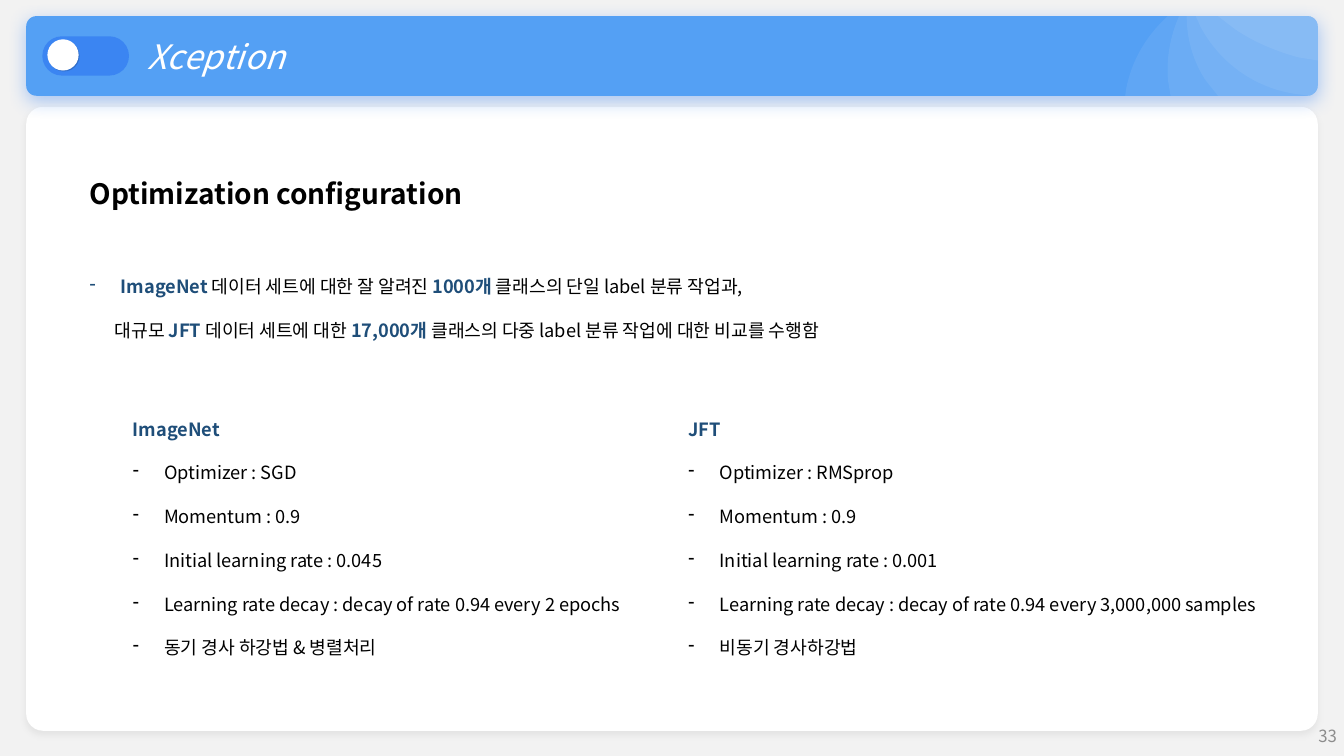
from dataclasses import dataclass

from lxml.etree import SubElement
from pptx import Presentation
from pptx.dml.color import RGBColor
from pptx.enum.shapes import MSO_SHAPE as Kind
from pptx.enum.text import MSO_ANCHOR as Anchor, PP_ALIGN as Align
from pptx.oxml.ns import qn
from pptx.util import Inches, Pt


@dataclass(frozen=True)
class Theme:
    font: str = "Noto Sans CJK KR"
    back: str = "F2F2F2"
    white: str = "FFFFFF"
    black: str = "000000"
    sky: str = "54A0F4"
    blue: str = "3B85F2"
    navy: str = "1F4E79"
    gray: str = "8C8C8C"
    banner: int = 24
    title: int = 20
    body: int = 13
    page: int = 12


T = Theme()
HANG = 0.31

# Leaves are measured from the banner's top right corner:
# start x, whether the lower right corner is rounded, then lines (2) and curves (6).
LEAVES = [
    (-1.3, True, [(-0.99, 0.79), (-1.11, 0.64), (-1.23, 0.46, -1.3, 0.24, -1.3, 0)]),
    (-1.21, True, [(-0.15, 0.78), (-0.59, 0.74, -0.96, 0.48, -1.16, 0.11)]),
    (-0.99, False, [(0, 0.44), (-0.19, 0.41), (-0.41, 0.35, -0.63, 0.26, -0.82, 0.13)]),
    (-1.38, True, [(-1.46, 0.79), (-1.48, 0.67), (-1.49, 0.62, -1.49, 0.58, -1.49, 0.53),
                   (-1.49, 0.35, -1.45, 0.17, -1.38, 0.01)]),
    (-1.49, True, [(-1.91, 0.79), (-1.9, 0.72), (-1.85, 0.46, -1.72, 0.23, -1.54, 0.05)]),
]

INTRO = [
    [("ImageNet", True), (" 데이터 세트에 대한 잘 알려진 ", False), ("1000개", True),
     (" 클래스의 단일 label 분류 작업과,", False)],
    [("대규모 ", False), ("JFT ", True), ("데이터 세트에 대한 ", False), ("17,000개", True),
     (" 클래스의 다중 label 분류 작업에 대한 비교를 수행함", False)],
]

SETUPS = [
    ((1.22, 3.88, 5.16, 2.66), "ImageNet", [
        "Optimizer : SGD", "Momentum : 0.9", "Initial learning rate : 0.045",
        "Learning rate decay : decay of rate 0.94 every 2 epochs",
        "동기 경사 하강법 & 병렬처리"]),
    ((6.73, 3.88, 5.92, 2.66), "JFT", [
        "Optimizer : RMSprop", "Momentum : 0.9", "Initial learning rate : 0.001",
        "Learning rate decay : decay of rate 0.94 every 3,000,000 samples",
        "비동기 경사하강법"]),
]


def color(code):
    return RGBColor.from_string(code)


def paint(shape, fill):
    shape.fill.solid()
    shape.fill.fore_color.rgb = color(fill)
    shape.line.fill.background()
    shape.shadow.inherit = False


def add_form(shapes, kind, box, fill, curve=None):
    form = shapes.add_shape(kind, *map(Inches, box))
    if curve is not None:
        form.adjustments[0] = curve
    paint(form, fill)
    return form


def set_alpha(node, share):
    SubElement(node, qn("a:alpha"), val=str(share * 1000))


def cast(shape, shade, share, blur, dist, angle):
    """Give the shape an outer shadow; blur and distance in points."""
    effects = shape._element.spPr.find(qn("a:effectLst"))
    outer = SubElement(effects, qn("a:outerShdw"), blurRad=str(Pt(blur)), dist=str(Pt(dist)),
                       dir=str(angle * 60000), algn="ctr", rotWithShape="0")
    set_alpha(SubElement(outer, qn("a:srgbClr"), val=shade), share)


def add_run(para, text, size, shade, bold=False, italic=False):
    run = para.add_run()
    run.text = text
    font = run.font
    font.name, font.size, font.bold, font.italic = T.font, Pt(size), bold, italic
    font.color.rgb = color(shade)


def add_box(slide, box):
    frame = slide.shapes.add_textbox(*map(Inches, box)).text_frame
    frame.word_wrap = True
    return frame


def indent(para, left, first=0.0):
    props = para._p.get_or_add_pPr()
    props.set("marL", str(Inches(left)))
    props.set("indent", str(Inches(first)))
    return props


def add_dash(para):
    SubElement(indent(para, HANG, -HANG), qn("a:buChar"), char="-")


def bend(outline, moves):
    """Turn each three segments that stand for a curve into one cubic segment."""
    lines = iter(outline.findall(qn("a:lnTo")))
    for move in moves:
        line = next(lines)
        if len(move) == 6:
            line.tag = qn("a:cubicBezTo")
            for _ in range(2):
                extra = next(lines)
                line.append(extra[0])
                outline.remove(extra)


def add_leaf(shapes, right, top, start, full, tail):
    moves = [(-0.1, 0), (-0.04, 0, 0, 0.05, 0, 0.1)]
    if full:
        moves += [(0, 0.69), (0, 0.75, -0.04, 0.79, -0.1, 0.79)]
    moves += tail
    spots = [(Inches(right + move[k]), Inches(top + move[k + 1]))
             for move in moves for k in range(0, len(move), 2)]
    pen = shapes.build_freeform(Inches(right + start), Inches(top))
    pen.add_line_segments(spots, close=True)
    leaf = pen.convert_to_shape()
    bend(leaf._element.spPr.find(".//" + qn("a:path")), moves)
    paint(leaf, T.white)
    set_alpha(leaf._element.spPr.find(".//" + qn("a:srgbClr")), 7)


def add_banner(slide, box, title):
    left, top, width, _ = box
    bar = add_form(slide.shapes, Kind.ROUNDED_RECTANGLE, box, T.sky, 0.128)
    cast(bar, T.blue, 40, 13, 3, 90)
    frame = bar.text_frame
    frame.vertical_anchor = Anchor.MIDDLE
    para = frame.paragraphs[0]
    para.alignment = Align.LEFT
    indent(para, 1.08)
    add_run(para, title, T.banner, T.white, italic=True)

    switch = slide.shapes.add_group_shape().shapes
    add_form(switch, Kind.ROUNDED_RECTANGLE, (left + 0.16, top + 0.2, 0.86, 0.39), T.blue, 0.5)
    knob = add_form(switch, Kind.OVAL, (left + 0.21, top + 0.23, 0.31, 0.31), T.white)
    cast(knob, T.black, 17, 0, 1, 45)

    fan = slide.shapes.add_group_shape().shapes
    for leaf in LEAVES:
        add_leaf(fan, left + width, top, *leaf)


def add_intro(slide, box, title, lines):
    frame = add_box(slide, box)
    head = frame.paragraphs[0]
    head.line_spacing = 2.0
    add_run(head, title, T.title, T.black, bold=True)
    for row, parts in enumerate(lines):
        para = frame.add_paragraph()
        para.line_spacing = 2.0
        if row == 0:
            para.space_before = Pt(31)
            add_dash(para)
        else:
            indent(para, 0.25)
        for text, key in parts:
            add_run(para, text, T.body, T.navy if key else T.black, bold=key)


def add_setup(slide, box, name, items):
    frame = add_box(slide, box)
    head = frame.paragraphs[0]
    head.line_spacing = 2.0
    add_run(head, name, T.body, T.navy, bold=True)
    for item in items:
        para = frame.add_paragraph()
        para.line_spacing = 2.0
        add_dash(para)
        add_run(para, item, T.body, T.black)


def add_page(slide, box, number):
    frame = add_box(slide, box)
    frame.vertical_anchor = Anchor.MIDDLE
    para = frame.paragraphs[0]
    para.alignment = Align.RIGHT
    add_run(para, number, T.page, T.gray)


def main():
    deck = Presentation()
    deck.slide_width, deck.slide_height = Inches(13.33), Inches(7.5)
    slide = deck.slides.add_slide(deck.slide_layouts[6])
    slide.background.fill.solid()
    slide.background.fill.fore_color.rgb = color(T.back)
    card = add_form(slide.shapes, Kind.ROUNDED_RECTANGLE, (0.26, 1.06, 12.81, 6.19), T.white, 0.027)
    cast(card, T.black, 5, 4, 3, 90)
    add_banner(slide, (0.26, 0.16, 12.81, 0.79), "Xception")
    add_intro(slide, (0.79, 1.37, 9.12, 2.02), "Optimization configuration", INTRO)
    for setup in SETUPS:
        add_setup(slide, *setup)
    add_page(slide, (10.36, 7.1, 3, 0.4), "33")
    deck.save("out.pptx")


if __name__ == "__main__":
    main()
